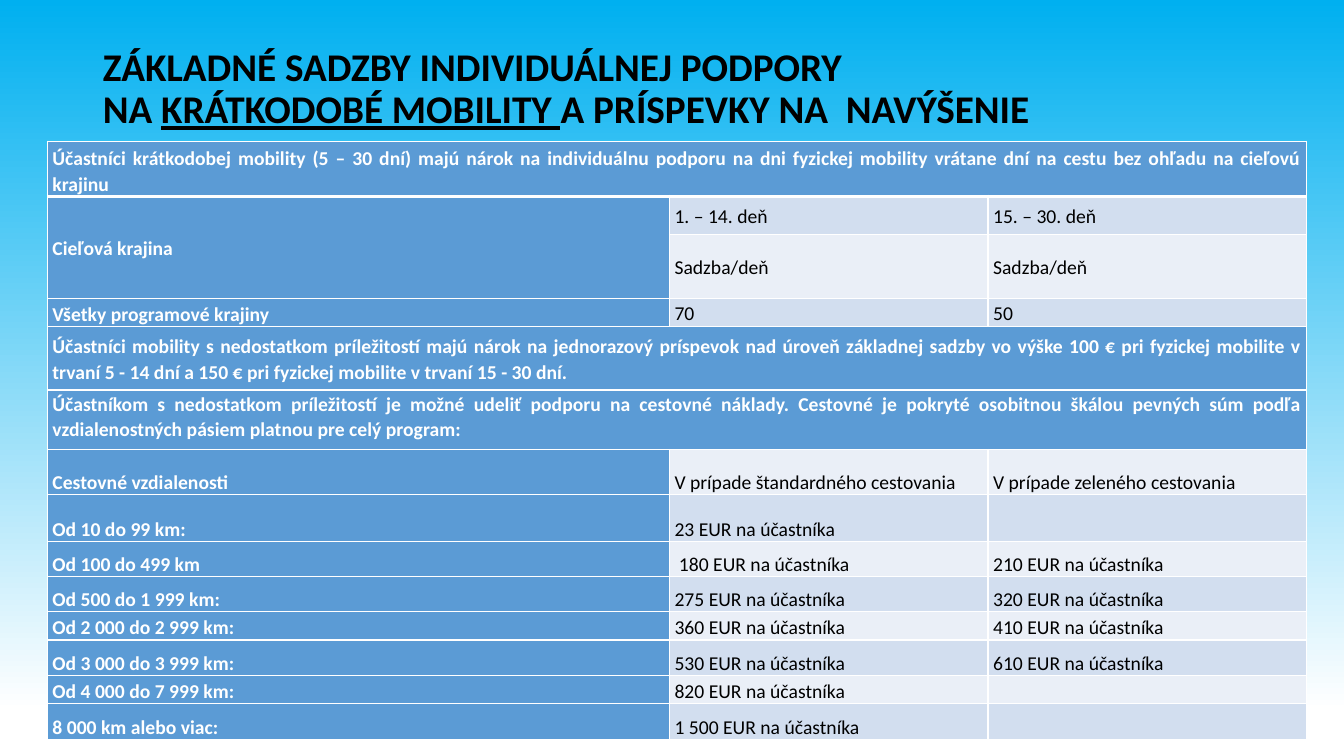
"""Builds the slide with base rates of support for short-term mobility."""
from copy import deepcopy

from lxml import etree
from pptx import Presentation
from pptx.dml.color import RGBColor
from pptx.enum import text
from pptx.oxml.ns import qn
from pptx.util import Inches, Pt

SKY = RGBColor(0x00, 0xB0, 0xF0)
WHITE = RGBColor(0xFF, 0xFF, 0xFF)
BLACK = RGBColor(0x00, 0x00, 0x00)
BLUE = RGBColor(0x5B, 0x9B, 0xD5)
BANDS = (RGBColor(0xEA, 0xEF, 0xF7), RGBColor(0xD2, 0xDE, 0xEF))

TOP, MIDDLE, BOTTOM = (text.MSO_ANCHOR.TOP, text.MSO_ANCHOR.MIDDLE,
                       text.MSO_ANCHOR.BOTTOM)

TITLE_LINES = [
    [("ZÁKLADNÉ SADZBY INDIVIDUÁLNEJ PODPORY ", False)],
    [("NA ", False), ("KRÁTKODOBÉ MOBILITY ", True),
     ("A PRÍSPEVKY NA  NAVÝŠENIE", False)],
]

COLUMN_WIDTHS = (6.17, 3.16, 3.16)
RATES = [
    (0.55, BOTTOM, ["Účastníci krátkodobej mobility (5 – 30 dní) majú nárok na "
                    "individuálnu podporu na dni fyzickej mobility vrátane dní "
                    "na cestu bez ohľadu na cieľovú krajinu"]),
    (0.38, MIDDLE, ["Cieľová krajina", "1. – 14. deň", "15. – 30. deň"]),
    (0.63, MIDDLE, ["", "Sadzba/deň", "Sadzba/deň"]),
    (0.28, MIDDLE, ["Všetky programové krajiny", "70", "50"]),
    (0.63, MIDDLE, ["Účastníci mobility s nedostatkom príležitostí majú nárok na "
                    "jednorazový príspevok nad úroveň základnej sadzby vo výške "
                    "100 € pri fyzickej mobilite v trvaní 5 - 14 dní a 150 € pri "
                    "fyzickej mobilite v trvaní 15 - 30 dní."]),
    (0.59, TOP, ["Účastníkom s nedostatkom príležitostí je možné udeliť podporu "
                 "na cestovné náklady. Cestovné je pokryté osobitnou škálou "
                 "pevných súm podľa vzdialenostných pásiem platnou pre celý "
                 "program:"]),
    (0.45, BOTTOM, ["Cestovné vzdialenosti", "V prípade štandardného cestovania ",
                    "V prípade zeleného cestovania"]),
    (0.46, BOTTOM, ["Od 10 do 99 km:", "23 EUR na účastníka", ""]),
    (0.35, BOTTOM, ["Od 100 do 499 km", " 180 EUR na účastníka",
                    "210 EUR na účastníka"]),
    (0.35, BOTTOM, ["Od 500 do 1 999 km:", "275 EUR na účastníka",
                    "320 EUR na účastníka"]),
    (0.28, BOTTOM, ["Od 2 000 do 2 999 km:", "360 EUR na účastníka",
                    "410 EUR na účastníka"]),
    (0.35, BOTTOM, ["Od 3 000 do 3 999 km:", "530 EUR na účastníka",
                    "610 EUR na účastníka"]),
    (0.28, BOTTOM, ["Od 4 000 do 7 999 km:", "820 EUR na účastníka", ""]),
    (0.36, BOTTOM, ["8 000 km alebo viac:", "1 500 EUR na účastníka", ""]),
]
COUNTRY_ROW, ALL_COUNTRIES_ROW = 1, 3


def paint_background(slide):
    """Fade the background from sky blue at the top to white."""
    fill = slide.background.fill
    fill.gradient()
    fill.gradient_angle = 270
    for stop, color, position in zip(fill.gradient_stops, (SKY, WHITE), (0, 0.94)):
        stop.color.rgb = color
        stop.position = position


def add_run(paragraph, words, size, color, bold):
    """Append one formatted run and return it."""
    run = paragraph.add_run()
    run.text = words
    run.font.name = "Calibri"
    run.font.size = Pt(size)
    run.font.bold = bold
    run.font.color.rgb = color
    return run


def end_paragraph(paragraph, size):
    """Give the empty end of a paragraph its text size."""
    etree.SubElement(paragraph._p, qn("a:endParaRPr"), sz=str(size * 100))


def write_title(title):
    """Place the title and write its lines, each closed by a break."""
    title.left, title.top = Inches(0.92), Inches(0.4)
    title.width, title.height = Inches(11.5), Inches(1.45)
    frame = title.text_frame
    frame.auto_size = text.MSO_AUTO_SIZE.NONE
    frame.vertical_anchor = MIDDLE
    paragraph = frame.paragraphs[0]
    paragraph.alignment = text.PP_ALIGN.LEFT
    paragraph.line_spacing = 0.9
    for line in TITLE_LINES:
        for words, underlined in line:
            run = add_run(paragraph, words, 28, BLACK, True)
            run.font.underline = underlined
        paragraph.add_line_break()
        paragraph._p[-1].append(deepcopy(run.font._element))
    end_paragraph(paragraph, 28)


def set_borders(cell, row):
    """Draw white cell borders, with a thick rule under the first row."""
    thick_side = {0: "lnB", 1: "lnT"}.get(row)
    properties = cell._tc.get_or_add_tcPr()
    for side in ("lnL", "lnR", "lnT", "lnB"):
        width = Pt(3 if side == thick_side else 1)
        border = etree.SubElement(properties, qn(f"a:{side}"), w=str(width))
        fill = etree.SubElement(border, qn("a:solidFill"))
        etree.SubElement(fill, qn("a:srgbClr"), val=str(WHITE))


def write_cell(cell, words, anchor, fill, color, bold):
    """Fill a cell and set its text."""
    cell.fill.solid()
    cell.fill.fore_color.rgb = fill
    cell.vertical_anchor = anchor
    cell.margin_left = cell.margin_right = Inches(0.05)
    cell.margin_top, cell.margin_bottom = Inches(0.01), 0
    paragraph = cell.text_frame.paragraphs[0]
    paragraph.alignment = text.PP_ALIGN.JUSTIFY
    paragraph.line_spacing = 1.07
    if words:
        add_run(paragraph, words, 14, color, bold)
    end_paragraph(paragraph, 14)


def add_rates(slide):
    """Add the table of daily rates and travel support."""
    table = slide.shapes.add_table(
        len(RATES), len(COLUMN_WIDTHS), Inches(0.47), Inches(1.4),
        Inches(sum(COLUMN_WIDTHS)), Inches(sum(rate[0] for rate in RATES))).table
    table.first_row = table.horz_banding = False
    for column, width in zip(table.columns, COLUMN_WIDTHS):
        column.width = Inches(width)
    for row, (height, anchor, entries) in enumerate(RATES):
        table.rows[row].height = Inches(height)
        for column in range(len(COLUMN_WIDTHS)):
            set_borders(table.cell(row, column), row)
        for column, words in enumerate(entries):
            cell = table.cell(row, column)
            if column:
                write_cell(cell, words, anchor, BANDS[row % 2], BLACK, False)
            else:
                write_cell(cell, words, anchor, BLUE, WHITE, True)
        if len(entries) == 1:
            table.cell(row, 0).merge(table.cell(row, 2))
    table.cell(COUNTRY_ROW, 0).merge(table.cell(COUNTRY_ROW + 1, 0))
    table.cell(ALL_COUNTRIES_ROW, 0).vertical_anchor = BOTTOM


def main():
    """Build and save the slide."""
    deck = Presentation()
    deck.slide_width, deck.slide_height = Inches(13.33), Inches(7.5)
    slide = deck.slides.add_slide(deck.slide_layouts[5])
    paint_background(slide)
    write_title(slide.shapes.title)
    add_rates(slide)
    deck.save("out.pptx")


if __name__ == "__main__":
    main()
